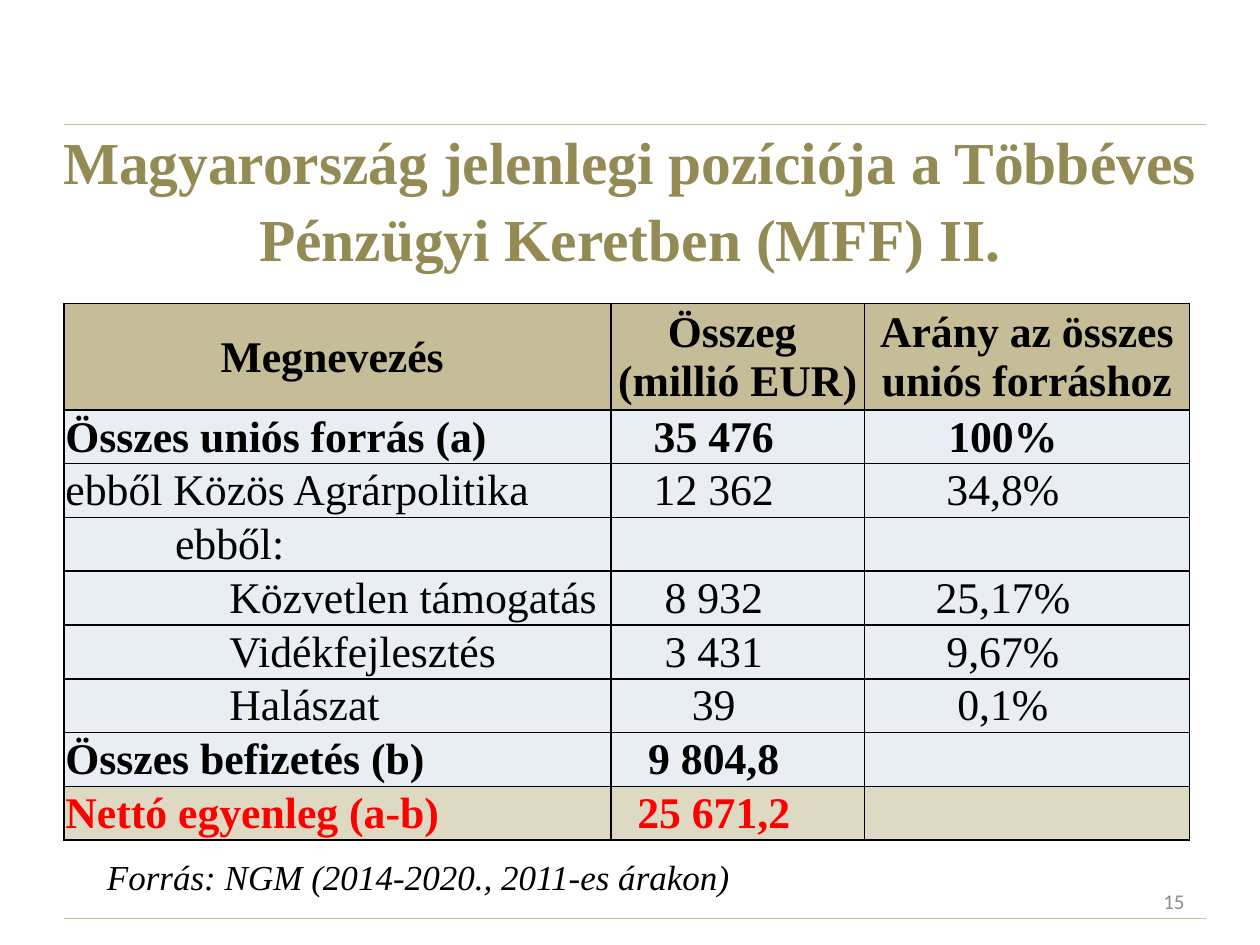
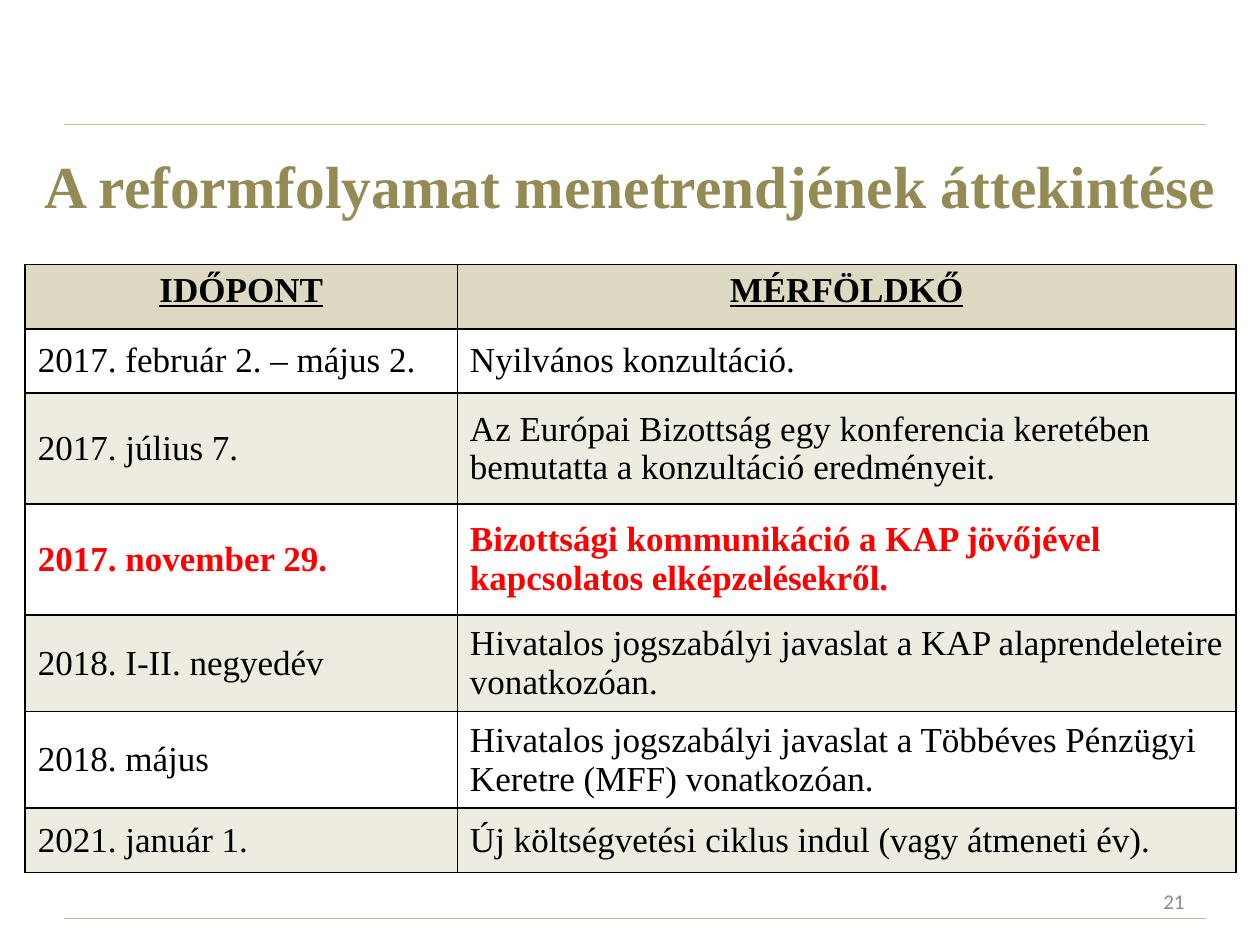
"""Builds two slides on the EU budget position of Hungary and the CAP reform schedule."""
import lxml.etree
import pptx
import pptx.dml.color
import pptx.enum.shapes
import pptx.enum.text
import pptx.oxml.ns
import pptx.util

Inches = pptx.util.Inches
RGB = pptx.dml.color.RGBColor.from_string
ALIGN = pptx.enum.text.PP_ALIGN
ANCHOR = pptx.enum.text.MSO_ANCHOR
qn = pptx.oxml.ns.qn


class Theme:
    serif, sans = "Times New Roman", "Calibri"
    title_size, budget_size, body_size, number_size = 34, 25, 20, 12
    title, rule, number = "948A54", "C4BD97", "8C8C8C"
    black, red, white = "000000", "FF0000", "FFFFFF"
    head, sand, cream, ice = "C4BD97", "DDD9C3", "EEECE1", "E9EDF4"


def add_run(p, text, size, color=Theme.black, align=ALIGN.LEFT, font=Theme.serif, **style):
    p.alignment = align
    r = p.add_run()
    r.text = text
    r.font.name, r.font.size = font, pptx.util.Pt(size)
    r.font.color.rgb = RGB(color)
    for name, value in style.items():
        setattr(r.font, name, value)


def style_cell(cell, fill, margins, anchor=ANCHOR.MIDDLE):
    cell.fill.solid()
    cell.fill.fore_color.rgb = RGB(fill)
    cell.vertical_anchor = anchor
    cell.margin_left, cell.margin_top, cell.margin_right, cell.margin_bottom = map(Inches, margins)
    tcPr = cell._tc.get_or_add_tcPr()
    for i, side in enumerate(("a:lnL", "a:lnR", "a:lnT", "a:lnB")):
        ln = lxml.etree.Element(qn(side), w="12700")
        solid = lxml.etree.SubElement(ln, qn("a:solidFill"))
        lxml.etree.SubElement(solid, qn("a:srgbClr"), val=Theme.black)
        tcPr.insert(i, ln)


prs = pptx.Presentation()
prs.slide_width, prs.slide_height = Inches(10), Inches(7.5)

slides = []
for title, height, number in (
    ("Magyarország jelenlegi pozíciója a Többéves Pénzügyi Keretben (MFF) II.", 0.94, "15"),
    ("A reformfolyamat menetrendjének áttekintése", 0.71, "21"),
):
    s = prs.slides.add_slide(prs.slide_layouts[6])
    slides.append(s)
    for y in (7.29, 0.99):
        line = s.shapes.add_connector(
            pptx.enum.shapes.MSO_CONNECTOR.STRAIGHT, Inches(0.51), Inches(y), Inches(9.57), Inches(y))
        line.line.color.rgb = RGB(Theme.rule)
        line.line.width = pptx.util.Pt(0.75)
        lxml.etree.SubElement(line._element.spPr, qn("a:effectLst"))
    tf = s.shapes.add_textbox(Inches(0.12), Inches(1.07), Inches(9.76), Inches(height)).text_frame
    tf.word_wrap = True
    tf.vertical_anchor = ANCHOR.MIDDLE
    tf.margin_top = Inches(0.08)
    tf.paragraphs[0].line_spacing = 1.08
    add_run(tf.paragraphs[0], title, Theme.title_size, Theme.title, ALIGN.CENTER, bold=True)
    tf = s.shapes.add_textbox(Inches(7.17), Inches(6.95), Inches(2.33), Inches(0.4)).text_frame
    tf.word_wrap = True
    tf.vertical_anchor = ANCHOR.MIDDLE
    add_run(tf.paragraphs[0], number, Theme.number_size, Theme.number, ALIGN.RIGHT, Theme.sans)

budget_slide, schedule_slide = slides

budget_head = (("Megnevezés ",), ("Összeg ", "(millió EUR)"), ("Arány az összes uniós forráshoz",))
budget = (
    (0, True, "Összes uniós forrás (a)", "35 476", "100%"),
    (0, False, "ebből Közös Agrárpolitika", "12 362", "34,8%"),
    (0.87, False, "ebből:", "", ""),
    (1.3, False, "Közvetlen támogatás", "8 932", "25,17%"),
    (1.3, False, "Vidékfejlesztés", "3 431", "9,67%"),
    (1.3, False, "Halászat", "39", "0,1%"),
    (0, True, "Összes befizetés (b)", "9 804,8", ""),
    (0, True, "Nettó egyenleg (a-b)", "25 671,2", ""),
)
sp = budget_slide.shapes.add_table(
    len(budget) + 1, 3, Inches(0.51), Inches(2.41), Inches(8.93), Inches(3.95))
table = sp.table
for column, width in zip(table.columns, (4.34, 2.01, 2.58)):
    column.width = Inches(width)
for i, row in enumerate(table.rows):
    row.height = Inches(0.39 if i else 0.83)
for cell, lines in zip(table.rows[0].cells, budget_head):
    style_cell(cell, Theme.head, (0.01, 0.01, 0.01, 0))
    tf = cell.text_frame
    for i, text in enumerate(lines):
        p = tf.add_paragraph() if i else tf.paragraphs[0]
        add_run(p, text, Theme.budget_size, align=ALIGN.CENTER, bold=True)
for i, (indent, bold, *texts) in enumerate(budget, 1):
    is_net = i == len(budget)
    for j, text in enumerate(texts):
        cell = table.cell(i, j)
        margins = (0.01, 0.01, 0.39, 0) if j else (0.01 + indent, 0.01, 0.01, 0)
        style_cell(cell, Theme.sand if is_net else Theme.ice, margins)
        if text:
            add_run(cell.text_frame.paragraphs[0], text, Theme.budget_size,
                    Theme.red if is_net else Theme.black,
                    ALIGN.CENTER if j else ALIGN.LEFT, bold=bold)

tf = budget_slide.shapes.add_textbox(Inches(0.75), Inches(6.74), Inches(5.18), Inches(0.44)).text_frame
tf.word_wrap = False
add_run(tf.paragraphs[0], "Forrás: NGM (2014-2020., 2011-es árakon)", Theme.body_size, italic=True)

schedule = (
    (0.51, "IDŐPONT", "MÉRFÖLDKŐ"),
    (0.51, "2017. február 2. – május 2.", "Nyilvános konzultáció."),
    (0.88, "2017. július 7.",
     "Az Európai Bizottság egy konferencia keretében bemutatta a konzultáció eredményeit."),
    (0.88, "2017. november 29.", "Bizottsági kommunikáció a KAP jövőjével kapcsolatos elképzelésekről."),
    (0.72, "2018. I-II. negyedév", "Hivatalos jogszabályi javaslat a KAP alaprendeleteire vonatkozóan."),
    (0.72, "2018. május",
     "Hivatalos jogszabályi javaslat a Többéves Pénzügyi Keretre (MFF) vonatkozóan."),
    (0.51, "2021. január 1.", "Új költségvetési ciklus indul (vagy átmeneti év)."),
)
highlight = 3
sp = schedule_slide.shapes.add_table(
    len(schedule), 2, Inches(0.2), Inches(2.1), Inches(9.61), Inches(4.73))
table = sp.table
for column, width in zip(table.columns, (3.43, 6.18)):
    column.width = Inches(width)
for i, (height, *texts) in enumerate(schedule):
    table.rows[i].height = Inches(height)
    is_head = i == 0
    fill = Theme.sand if is_head else (Theme.cream, Theme.white)[i % 2]
    for cell, text in zip(table.rows[i].cells, texts):
        style_cell(cell, fill, (0.1, 0.05, 0.1, 0.05), ANCHOR.TOP if is_head else ANCHOR.MIDDLE)
        add_run(cell.text_frame.paragraphs[0], text, Theme.body_size,
                Theme.red if i == highlight else Theme.black,
                ALIGN.CENTER if is_head else ALIGN.LEFT,
                bold=i in (0, highlight), underline=is_head)

prs.save("out.pptx")
